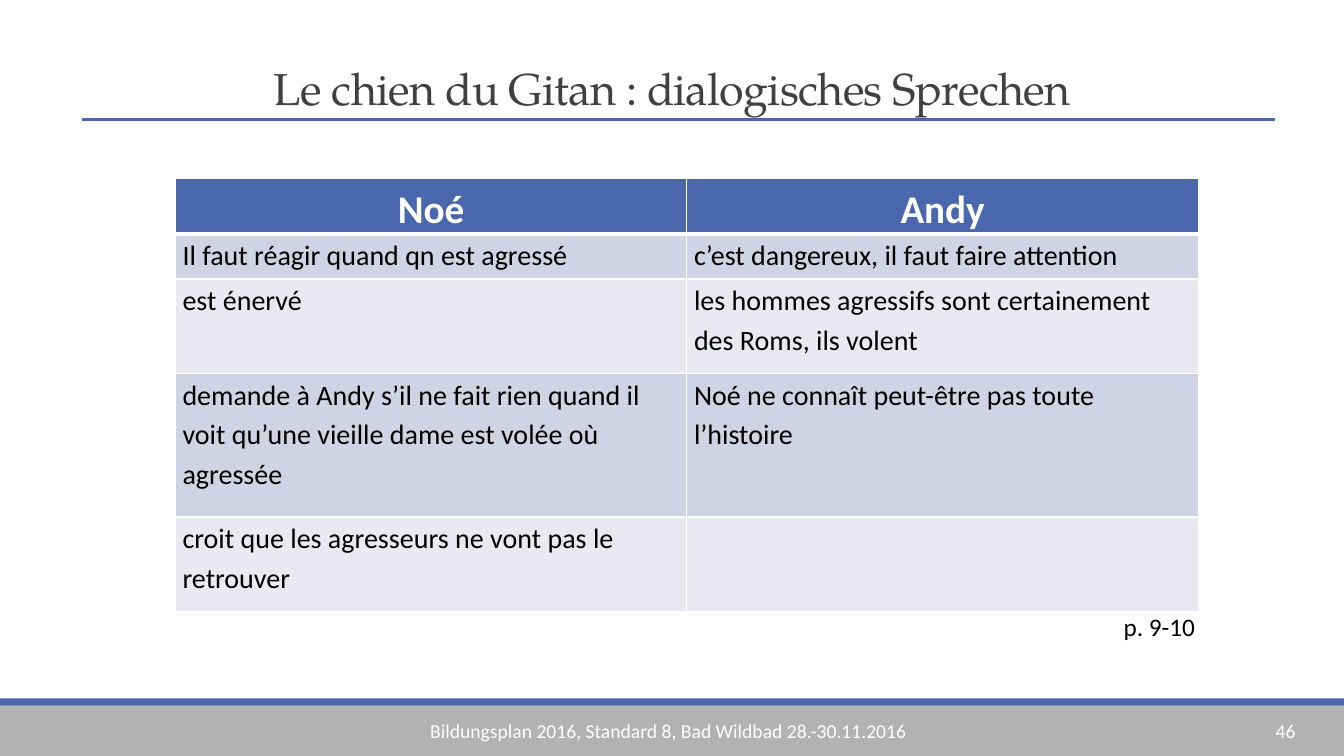
"""Builds the slide on dialogic speaking about "Le chien du Gitan"."""
from typing import NamedTuple

from lxml import etree
from pptx import Presentation
from pptx.dml.color import RGBColor
from pptx.enum import shapes, text
from pptx.oxml import ns
from pptx.util import Cm, Pt

COLOURS = {
    "accent": "4A66AC",
    "footer": "B2B2B2",
    "title": "404040",
    "odd": "D0D3E3",
    "even": "E9EAF1",
    "white": "FFFFFF",
    "black": "000000",
}
BODY_FONT, TITLE_FONT = "Calibri", "TeX Gyre Pagella"
COLUMN_WIDTH = 12.89
BORDER_POINTS = 1
HEADER_RULE_POINTS = 3


class Box(NamedTuple):
    """Left, top, width and height in centimetres."""
    left: float
    top: float
    width: float
    height: float

    def lengths(self) -> list[Cm]:
        """Give the four values as lengths."""
        return [Cm(value) for value in self]


class Band(NamedTuple):
    """A filled strip across the slide."""
    box: Box
    colour: str


class Label(NamedTuple):
    """A single line of text in its own box."""
    box: Box
    wording: str
    size: int
    colour: str
    wrap: bool


class Row(NamedTuple):
    """A table row with what each speaker says."""
    height: float
    noe: str
    andy: str


BANDS = [
    Band(Box(0, 17.78, 33.87, 1.27), "footer"),
    Band(Box(0, 17.6, 33.87, 0.18), "accent"),
]
LABELS = [
    Label(Box(10.59, 17.98, 12.67, 0.86),
          "Bildungsplan 2016, Standard 8, Bad Wildbad 28.-30.11.2016", 14, "white", True),
    Label(Box(31.9, 17.98, 1.95, 0.86), "46", 14, "white", True),
    Label(Box(28.07, 15.27, 2.34, 1.02), "p. 9-10", 18, "black", False),
]
ROWS = [
    Row(1.37, "Noé", "Andy"),
    Row(1.14, "Il faut réagir quand qn est agressé", "c’est dangereux, il faut faire attention"),
    Row(2.39, "est énervé", "les hommes agressifs sont certainement des Roms, ils volent"),
    Row(3.61, "demande à Andy s’il ne fait rien quand il voit qu’une vieille dame est volée où agressée",
        "Noé ne connaît peut-être pas toute l’histoire"),
    Row(2.39, "croit que les agresseurs ne vont pas le retrouver", ""),
]


def rgb(name: str) -> RGBColor:
    """Look up a named colour."""
    return RGBColor.from_string(COLOURS[name])


def apply(target, values: dict) -> None:
    """Set each attribute of the target."""
    for name, value in values.items():
        setattr(target, name, value)


def write(paragraph, wording: str, colour: str, **font_values):
    """Add a formatted run and return it."""
    run = paragraph.add_run()
    run.text = wording
    apply(run.font, {"name": BODY_FONT, **font_values})
    run.font.color.rgb = rgb(colour)
    return run


def draw_band(slide, band: Band) -> None:
    """Draw a strip without outline."""
    strip = slide.shapes.add_shape(shapes.MSO_SHAPE.RECTANGLE, *band.box.lengths())
    strip.shadow.inherit = False
    strip.fill.solid()
    strip.fill.fore_color.rgb = rgb(band.colour)
    strip.line.fill.background()


def draw_label(slide, label: Label) -> None:
    """Draw a text box with one line."""
    frame = slide.shapes.add_textbox(*label.box.lengths()).text_frame
    apply(frame, {"word_wrap": label.wrap, "auto_size": text.MSO_AUTO_SIZE.SHAPE_TO_FIT_TEXT})
    write(frame.paragraphs[0], label.wording, label.colour, size=Pt(label.size))


def draw_title(slide, wording: str) -> None:
    """Place the title and the rule beneath it."""
    title = slide.shapes.title
    apply(title, dict(zip(("left", "top", "width", "height"), Box(6.65, 0.89, 20.88, 2.13).lengths())))
    frame = title.text_frame
    apply(frame, {"word_wrap": True, "auto_size": text.MSO_AUTO_SIZE.NONE,
                  "vertical_anchor": text.MSO_ANCHOR.BOTTOM})
    apply(frame.paragraphs[0], {"alignment": text.PP_ALIGN.LEFT, "line_spacing": 0.85})
    heading = write(frame.paragraphs[0], wording, "title", name=TITLE_FONT, size=Pt(32))
    heading.font._element.set("spc", "-50")

    rule = slide.shapes.add_connector(shapes.MSO_CONNECTOR.STRAIGHT, Cm(2.06), Cm(3.02), Cm(32.13), Cm(3.02))
    rule.line.color.rgb = rgb("accent")
    rule.line.width = Pt(2.25)
    etree.SubElement(rule._element.spPr, ns.qn("a:effectLst"))


def border_cell(cell, widths: dict[str, int]) -> None:
    """Draw white borders of the given point widths."""
    properties = cell._tc.get_or_add_tcPr()
    for side, points in widths.items():
        edge = etree.SubElement(properties, ns.qn(f"a:ln{side}"), w=str(Pt(points)))
        fill = etree.SubElement(edge, ns.qn("a:solidFill"))
        etree.SubElement(fill, ns.qn("a:srgbClr"), val=COLOURS["white"])


def draw_table(slide, rows: list[Row]) -> None:
    """Draw the two speakers' arguments side by side."""
    box = Box(4.42, 4.5, 2 * COLUMN_WIDTH, sum(row.height for row in rows))
    arguments = slide.shapes.add_table(len(rows), 2, *box.lengths()).table
    for column in arguments.columns:
        column.width = Cm(COLUMN_WIDTH)
    for index, row in enumerate(rows):
        arguments.rows[index].height = Cm(row.height)
        header = index == 0
        band = "accent" if header else "odd" if index % 2 else "even"
        top = HEADER_RULE_POINTS if index == 1 else BORDER_POINTS
        bottom = HEADER_RULE_POINTS if header else BORDER_POINTS
        for cell, wording in zip(arguments.rows[index].cells, (row.noe, row.andy)):
            apply(cell, {"margin_left": Cm(0.18), "margin_right": Cm(0.18),
                         "margin_top": 0, "margin_bottom": 0})
            border_cell(cell, {"L": BORDER_POINTS, "R": BORDER_POINTS, "T": top, "B": bottom})
            cell.fill.solid()
            cell.fill.fore_color.rgb = rgb(band)
            if wording:
                paragraph = cell.text_frame.paragraphs[0]
                apply(paragraph, {"line_spacing": 1.15,
                                  "alignment": text.PP_ALIGN.CENTER if header else text.PP_ALIGN.LEFT})
                write(paragraph, wording, "white" if header else "black",
                      size=Pt(28 if header else 20), bold=header)


def main() -> None:
    """Build and save the presentation."""
    deck = Presentation()
    apply(deck, {"slide_width": Cm(33.87), "slide_height": Cm(19.05)})
    slide = deck.slides.add_slide(deck.slide_layouts[5])
    for band in BANDS:
        draw_band(slide, band)
    draw_title(slide, "Le chien du Gitan : dialogisches Sprechen")
    draw_table(slide, ROWS)
    for label in LABELS:
        draw_label(slide, label)
    deck.save("out.pptx")


if __name__ == "__main__":
    main()
